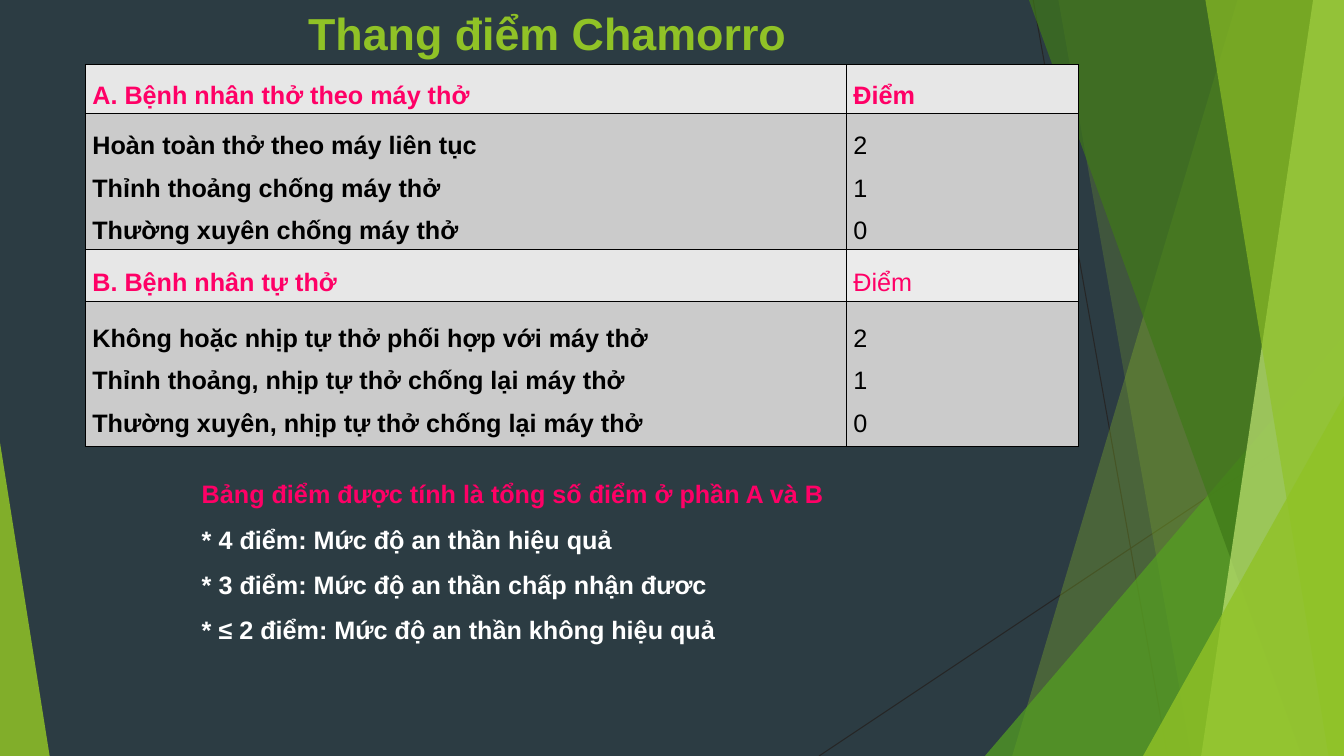
"""Builds the Chamorro sedation score slide."""
from lxml import etree
from pptx import Presentation, util as u
from pptx.dml import color
from pptx.enum import shapes, text
from pptx.oxml import ns

THEME = dict(font="Arial", title_size=32, body_size=18, back="2C3C43", green="90C226",
             leaf="54A021", forest="3F7819", lime="C0E474", hairline="262626",
             pink="FF0066", black="000000", white="FFFFFF",
             heading="E7E7E7", heading_score="EBEBEB", band="CBCBCB")
WIDTH, HEIGHT = 960, 540

HAIRLINES = [(738, 0, 834, 540), (960, 290, 585, 540)]
# SHARDS = ()
FACETS = [
    ("shard", (884, 723), "green", 30),
    ("shard", (756, 851), "green", 20),
    ("triangle", (703.5, 240, 256.5, 1), "leaf", 72),
    ("shard", (735, 930), "forest", 70),
    ("shard", (938, 858), "lime", 70),
    ("shard", (861, 949), "green", 65),
    ("triangle", (816.5, 283, 143.5, 1), "green", 80),
    ("triangle", (0, 316, 35.5, 0), "green", 85),
]

TITLE = "Thang điểm Chamorro"
COLUMNS = [543.6, 165.6]
SCORES = ["2", "1", "0"]
ROWS = [
    (35, "pink", [(["A. Bệnh nhân thở theo máy thở"], True, "heading"),
                  (["Điểm"], True, "heading")]),
    (94, "black", [(["Hoàn toàn thở theo máy liên tục", "Thỉnh thoảng chống máy thở",
                     "Thường xuyên chống máy thở"], True, "band"),
                   (SCORES, False, "band")]),
    (37, "pink", [(["B. Bệnh nhân tự thở"], True, "heading"),
                  (["Điểm"], False, "heading_score")]),
    (104, "black", [(["Không hoặc nhịp tự thở phối hợp với máy thở",
                      "Thỉnh thoảng, nhịp tự thở chống lại máy thở",
                      "Thường xuyên, nhịp tự thở chống lại máy thở"], True, "band"),
                    (SCORES, False, "band")]),
]
SUMMARY = [
    ("Bảng điểm được tính là tổng số điểm ở phần A và B", "pink"),
    ("* 4 điểm: Mức độ an thần hiệu quả", "white"),
    ("* 3 điểm: Mức độ an thần chấp nhận đươc", "white"),
    ("* ≤ 2 điểm: Mức độ an thần không hiệu quả", "white"),
]


def rgb(name):
    return color.RGBColor.from_string(THEME[name])


def write(frame, lines, size, bold=True, align=text.PP_ALIGN.JUSTIFY, spacing=1.5):
    for index, (line, ink) in enumerate(lines):
        paragraph = frame.add_paragraph() if index else frame.paragraphs[0]
        paragraph.text = line
        paragraph.alignment, paragraph.line_spacing = align, spacing
        font = paragraph.font
        font.name, font.size, font.bold = THEME["font"], u.Pt(THEME[size]), bold
        font.color.rgb = rgb(ink)


def add_hairline(slide, ends):
    hairline = slide.shapes.add_connector(shapes.MSO_CONNECTOR.STRAIGHT, *map(u.Pt, ends))
    hairline.line.color.rgb, hairline.line.width = rgb("hairline"), u.Pt(0.75)
    etree.SubElement(hairline._element.spPr, ns.qn("a:effectLst"))


def add_facet(slide, kind, place, fill, opacity):
    if kind == "shard":
        top, bottom = place
        outline = slide.shapes.build_freeform(top, 0, scale=u.Pt(1))
        outline.add_line_segments([(WIDTH, 0), (WIDTH, HEIGHT), (bottom, HEIGHT)], close=True)
        facet = outline.convert_to_shape()
    else:
        left, top, width, apex = place
        facet = slide.shapes.add_shape(shapes.MSO_SHAPE.ISOSCELES_TRIANGLE,
                                       *map(u.Pt, (left, top, width, HEIGHT - top)))
        facet.adjustments[0] = apex
    facet.shadow.inherit = False
    facet.line.fill.background()
    facet.fill.solid()
    facet.fill.fore_color.rgb = rgb(fill)
    tint = facet._element.spPr.find(".//" + ns.qn("a:srgbClr"))
    etree.SubElement(tint, ns.qn("a:alpha"), val=str(opacity * 1000))


def add_text(slide, place):
    frame = slide.shapes.add_textbox(*map(u.Pt, place)).text_frame
    frame.word_wrap = True
    return frame


def add_borders(cell):
    properties = cell._tc.get_or_add_tcPr()
    for position, side in enumerate(("lnL", "lnR", "lnT", "lnB")):
        border = etree.Element(ns.qn("a:" + side), w=str(u.Pt(1)))
        fill = etree.SubElement(border, ns.qn("a:solidFill"))
        etree.SubElement(fill, ns.qn("a:srgbClr"), val=THEME["black"])
        properties.insert(position, border)


def add_scale(slide):
    place = (61, 46, sum(COLUMNS), sum(row[0] for row in ROWS))
    scale = slide.shapes.add_table(len(ROWS), len(COLUMNS), *map(u.Pt, place)).table
    for column, width in zip(scale.columns, COLUMNS):
        column.width = u.Pt(width)
    for row, (height, ink, cells) in zip(scale.rows, ROWS):
        row.height = u.Pt(height)
        for cell, (lines, bold, fill) in zip(row.cells, cells):
            cell.margin_left = cell.margin_right = u.Pt(5)
            cell.margin_top = cell.margin_bottom = 0
            cell.vertical_anchor = text.MSO_ANCHOR.MIDDLE
            cell.fill.solid()
            cell.fill.fore_color.rgb = rgb(fill)
            add_borders(cell)
            write(cell.text_frame, [(line, ink) for line in lines], "body_size", bold)


def main():
    deck = Presentation()
    deck.slide_width, deck.slide_height = u.Pt(WIDTH), u.Pt(HEIGHT)
    slide = deck.slides.add_slide(deck.slide_layouts[6])
    slide.background.fill.solid()
    slide.background.fill.fore_color.rgb = rgb("back")
    for ends in HAIRLINES:
        add_hairline(slide, ends)
    for facet in FACETS:
        add_facet(slide, *facet)
    title = add_text(slide, (52.5, 0, 677, 47))
    title.vertical_anchor = text.MSO_ANCHOR.MIDDLE
    write(title, [(TITLE, "green")], "title_size", align=text.PP_ALIGN.CENTER, spacing=1)
    add_scale(slide)
    summary = add_text(slide, (65, 327.5, 633, 137.5))
    write(summary, SUMMARY, "body_size")
    for paragraph in summary.paragraphs:
        indents = paragraph._p.get_or_add_pPr()
        indents.set("marL", str(u.Pt(36)))
        indents.set("indent", str(u.Pt(36)))
    deck.save("out.pptx")


if __name__ == "__main__":
    main()
